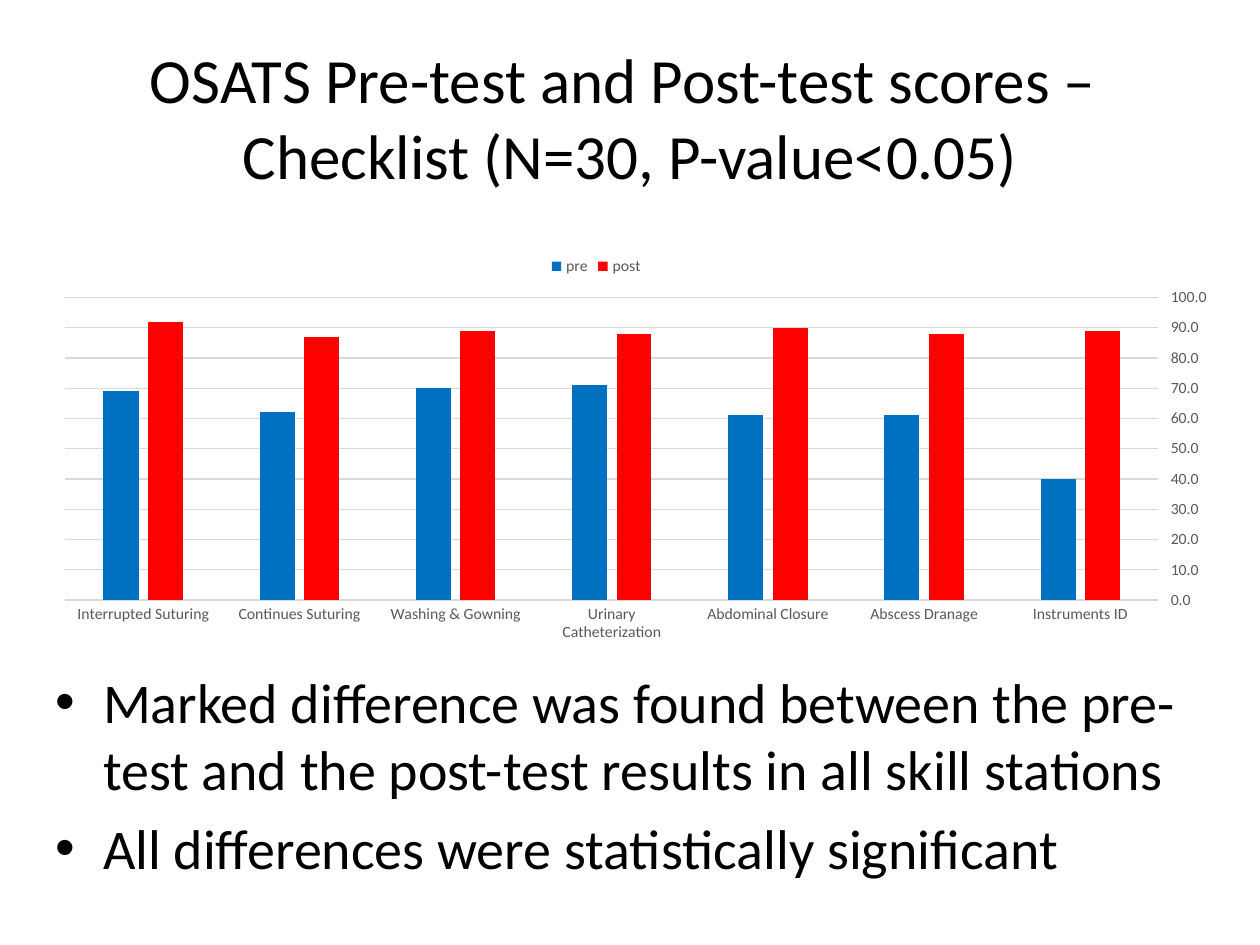
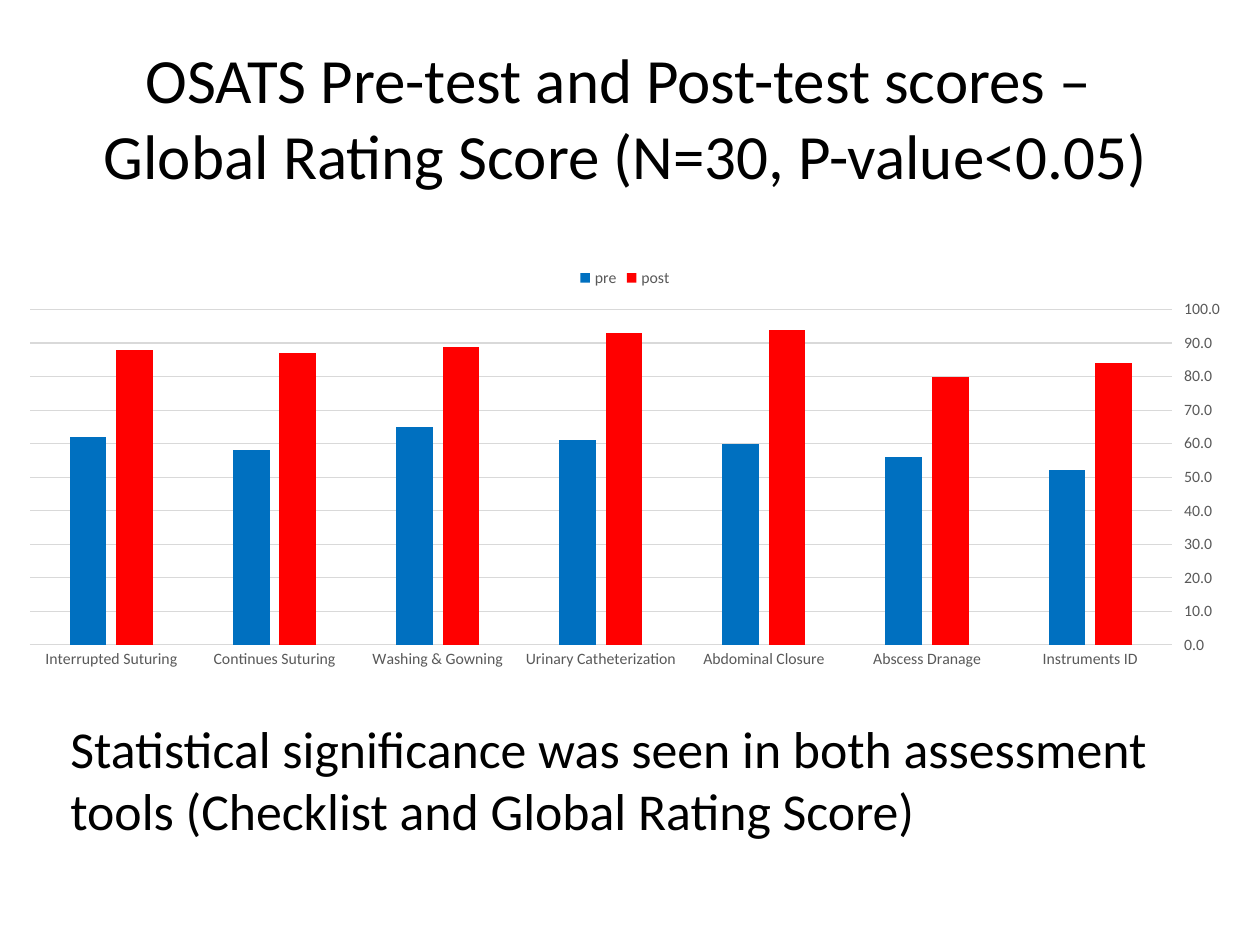
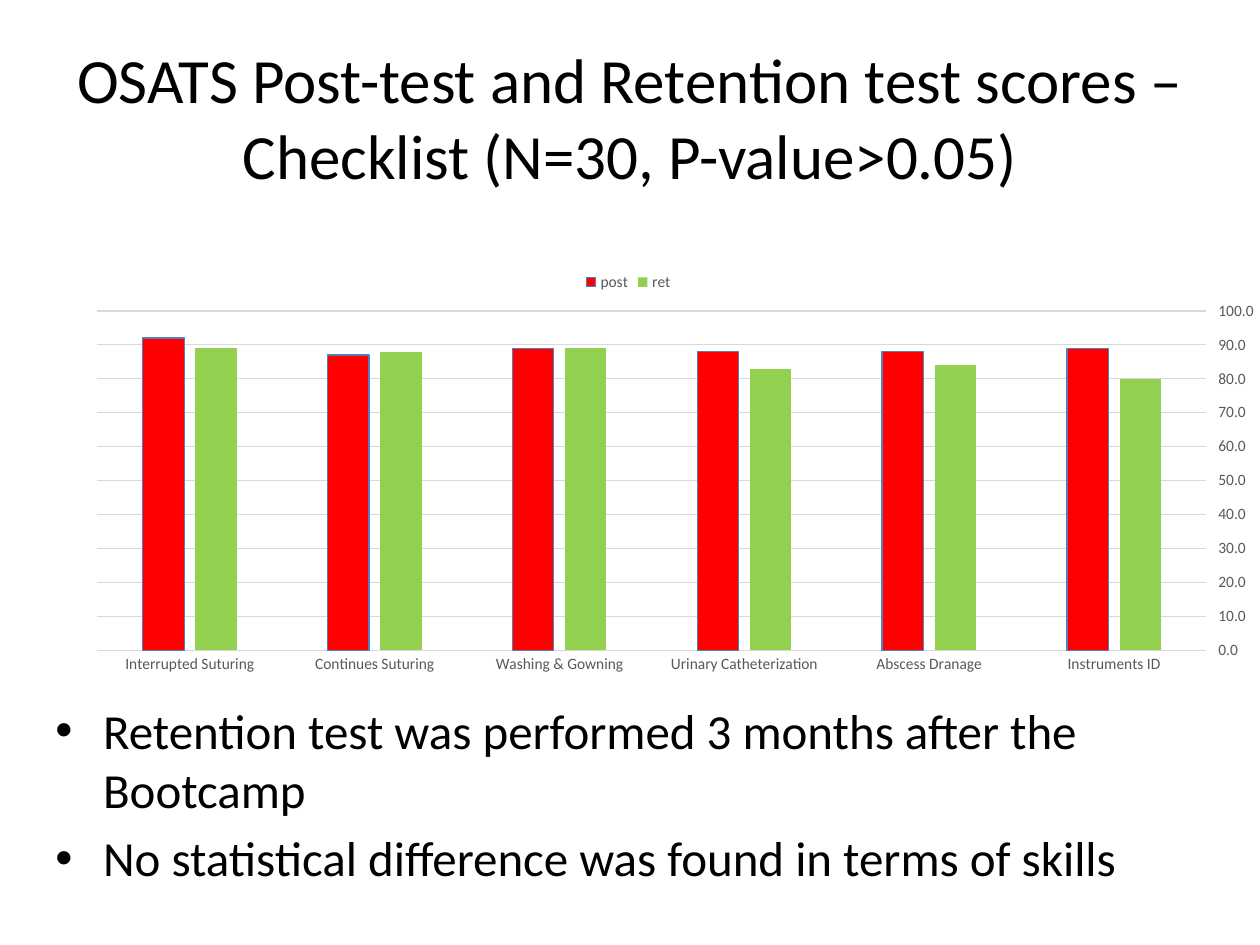
from lxml import etree
from pptx import Presentation
from pptx import util as u
from pptx.chart import data as chart_data
from pptx.dml import color
from pptx.enum import chart as charts, text
from pptx.oxml import ns

WIDTH, HEIGHT = u.Inches(10), u.Inches(7.5)
COLUMNS, ROWS = 100, 75
FONT = "Calibri"
BLACK, GREY, RULE, OUTLINE = "000000", "595959", "D9D9D9", "4F81BD"
FILLS = {"pre": "0070C0", "post": "FF0000", "ret": "92D050"}
STATIONS = ["Interrupted Suturing", "Continues Suturing", "Washing & Gowning",
            "Urinary Catheterization", "Abdominal Closure", "Abscess Dranage",
            "Instruments ID"]

PAGES = [
    {
        "title": "OSATS Pre-test and Post-test scores – \vChecklist (N=30, P-value<0.05)",
        "title_box": (1.2, 3, 97.6, 12.5),
        "chart": {
            "box": (3.4, 14.7, 93.2, 36.2),
            "stations": STATIONS,
            "scores": {"pre": [69, 62, 70, 71, 61, 61, 40],
                       "post": [92, 87, 89, 88, 90, 88, 89]},
            "plot": {"x": 1.9, "y": 24.9, "w": 93.1, "h": 67.2},
            "legend": {"x": 42.9, "y": 14.9},
        },
        "body": {
            "box": (3.4, 52.5, 94.7, 20.5), "size": 32, "bulleted": True,
            "lines": ["Marked difference was found between the pre-test and the "
                      "post-test results in all skill stations",
                      "All differences were statistically significant"],
        },
    },
    {
        "title": "OSATS Pre-test and Post-test scores – \vGlobal Rating Score (N=30, P-value<0.05)",
        "title_box": (2, 3, 95.3, 12.5),
        "chart": {
            "box": (0.4, 20.2, 98.4, 33.5),
            "stations": STATIONS,
            "scores": {"pre": [62, 58, 65, 61, 60, 56, 52],
                       "post": [88, 87, 89, 93, 94, 80, 84]},
        },
        "body": {
            "box": (4.6, 56.4, 92.6, 14.5), "size": 29.6, "bulleted": False,
            "lines": ["Statistical significance was seen in both assessment tools "
                      "(Checklist and Global Rating Score)"],
        },
    },
    {
        "title": "OSATS Post-test and Retention test scores – Checklist (N=30, P-value>0.05)",
        "title_box": (5, 3, 90, 12.5),
        "chart": {
            "box": (3.4, 16.2, 96.1, 40.2),
            "stations": [name for name in STATIONS if name != "Abdominal Closure"],
            "scores": {"post": [92, 87, 89, 88, 88, 89],
                       "ret": [89, 88, 89, 83, 84, 80]},
            "plot": {"x": 4.6, "y": 21.1, "w": 93.7, "h": 67},
            "legend": {"x": 45.5, "y": 12.6},
            "outlined": "post",
        },
        "body": {
            "box": (3.4, 55.1, 93.8, 18.6), "size": 28, "bulleted": True,
            "lines": ["Retention test was performed 3 months after the Bootcamp",
                      "No statistical difference was found in terms of skills"],
        },
    },
]


def rgb(value):
    """Turn a hex string into a colour."""
    return color.RGBColor.from_string(value)


def place(box):
    """Turn grid columns and rows into left, top, width and height."""
    left, top, width, height = box
    return (round(WIDTH * left / COLUMNS), round(HEIGHT * top / ROWS),
            round(WIDTH * width / COLUMNS), round(HEIGHT * height / ROWS))


def apply(target, values):
    """Set each attribute of a target from a dict."""
    for name, value in values.items():
        setattr(target, name, value)


def style_font(font, size, shade):
    """Give a font the deck's face, a size and a colour."""
    apply(font, {"name": FONT, "size": u.Pt(size), "bold": False})
    font.color.rgb = rgb(shade)


def style_line(line, shade):
    """Draw a thin line in one colour."""
    line.color.rgb = rgb(shade)
    line.width = u.Pt(0.75)


def add_bullet(para):
    """Hang a paragraph behind a round bullet."""
    properties = para._p.get_or_add_pPr()
    indent = u.Inches(0.38)
    properties.set("marL", str(indent))
    properties.set("indent", str(-indent))
    etree.SubElement(properties, ns.qn("a:buFont"), typeface="Arial")
    etree.SubElement(properties, ns.qn("a:buChar"), char="•")


def fix_layout(parent, position, percents, inner=False):
    """Pin a chart part to percentages of the chart's size."""
    for old in parent.findall(ns.qn("c:layout")):
        parent.remove(old)
    layout = etree.Element(ns.qn("c:layout"))
    manual = etree.SubElement(layout, ns.qn("c:manualLayout"))
    if inner:
        etree.SubElement(manual, ns.qn("c:layoutTarget"), val="inner")
    for name in ("x", "y"):
        etree.SubElement(manual, ns.qn(f"c:{name}Mode"), val="edge")
    for name, percent in percents.items():
        etree.SubElement(manual, ns.qn(f"c:{name}"), val=f"{percent / 100:.3f}")
    parent.insert(position, layout)


def add_title(page, wording, box):
    """Fill and move the title placeholder."""
    title = page.shapes.title
    apply(title, dict(zip(("left", "top", "width", "height"), place(box))))
    apply(title.text_frame, {"text": wording, "word_wrap": True,
                             "auto_size": text.MSO_AUTO_SIZE.NONE,
                             "vertical_anchor": text.MSO_ANCHOR.MIDDLE})
    para = title.text_frame.paragraphs[0]
    para.alignment = text.PP_ALIGN.CENTER
    for span in para.runs:
        style_font(span.font, 36, BLACK)


def add_body(page, box, size, bulleted, lines):
    """Write the findings below the chart."""
    frame = page.shapes.add_textbox(*place(box)).text_frame
    frame.word_wrap = True
    for index, line in enumerate(lines):
        para = frame.add_paragraph() if index else frame.paragraphs[0]
        if index:
            para.space_before = u.Pt(round(size * 0.2, 1))
        if bulleted:
            add_bullet(para)
        span = para.add_run()
        span.text = line
        style_font(span.font, size, BLACK)


def style_axes(chart):
    """Show scores on the right and station names below."""
    stations, scores = chart.category_axis, chart.value_axis
    for axis in (stations, scores):
        apply(axis, {"major_tick_mark": charts.XL_TICK_MARK.NONE,
                     "minor_tick_mark": charts.XL_TICK_MARK.NONE})
        style_font(axis.tick_labels.font, 9, GREY)
    style_line(stations.format.line, RULE)
    apply(scores, {"minimum_scale": 0, "maximum_scale": 100, "major_unit": 10,
                   "has_major_gridlines": True,
                   "tick_label_position": charts.XL_TICK_LABEL_POSITION.HIGH})
    apply(scores.tick_labels, {"number_format": "0.0",
                               "number_format_is_linked": False})
    style_line(scores.major_gridlines.format.line, RULE)
    scores.format.line.fill.background()


def add_scores(page, box, stations, scores, plot=None, legend=None, outlined=None):
    """Chart two rounds of test scores by skill station."""
    values = chart_data.CategoryChartData(number_format="0.0")
    values.categories = stations
    for name, marks in scores.items():
        values.add_series(name, marks)
    chart = page.shapes.add_chart(charts.XL_CHART_TYPE.COLUMN_CLUSTERED,
                                  *place(box), values).chart
    apply(chart, {"has_title": False, "has_legend": True})
    style_font(chart.font, 10, BLACK)
    style_axes(chart)
    bars = chart.plots[0]
    apply(bars, {"gap_width": 219, "overlap": -27, "vary_by_categories": False})
    for series in bars.series:
        series.format.fill.solid()
        series.format.fill.fore_color.rgb = rgb(FILLS[series.name])
        if series.name == outlined:
            style_line(series.format.line, OUTLINE)
    positions = charts.XL_LEGEND_POSITION
    apply(chart.legend, {"position": positions.BOTTOM if legend else positions.TOP,
                         "include_in_layout": False})
    style_font(chart.legend.font, 9, GREY)
    if plot:
        area = chart._chartSpace.chart.plotArea
        fix_layout(area, 0, plot, inner=True)
    if legend:
        fix_layout(chart.legend._element, 1, legend)


def add_page(deck, content):
    """Build one slide of title, chart and findings."""
    page = deck.slides.add_slide(deck.slide_layouts.get_by_name("Title Only"))
    add_title(page, content["title"], content["title_box"])
    add_body(page, **content["body"])
    add_scores(page, **content["chart"])


def main():
    """Build and save the deck."""
    deck = Presentation()
    apply(deck, {"slide_width": WIDTH, "slide_height": HEIGHT})
    for content in PAGES:
        add_page(deck, content)
    deck.save("out.pptx")


if __name__ == "__main__":
    main()
